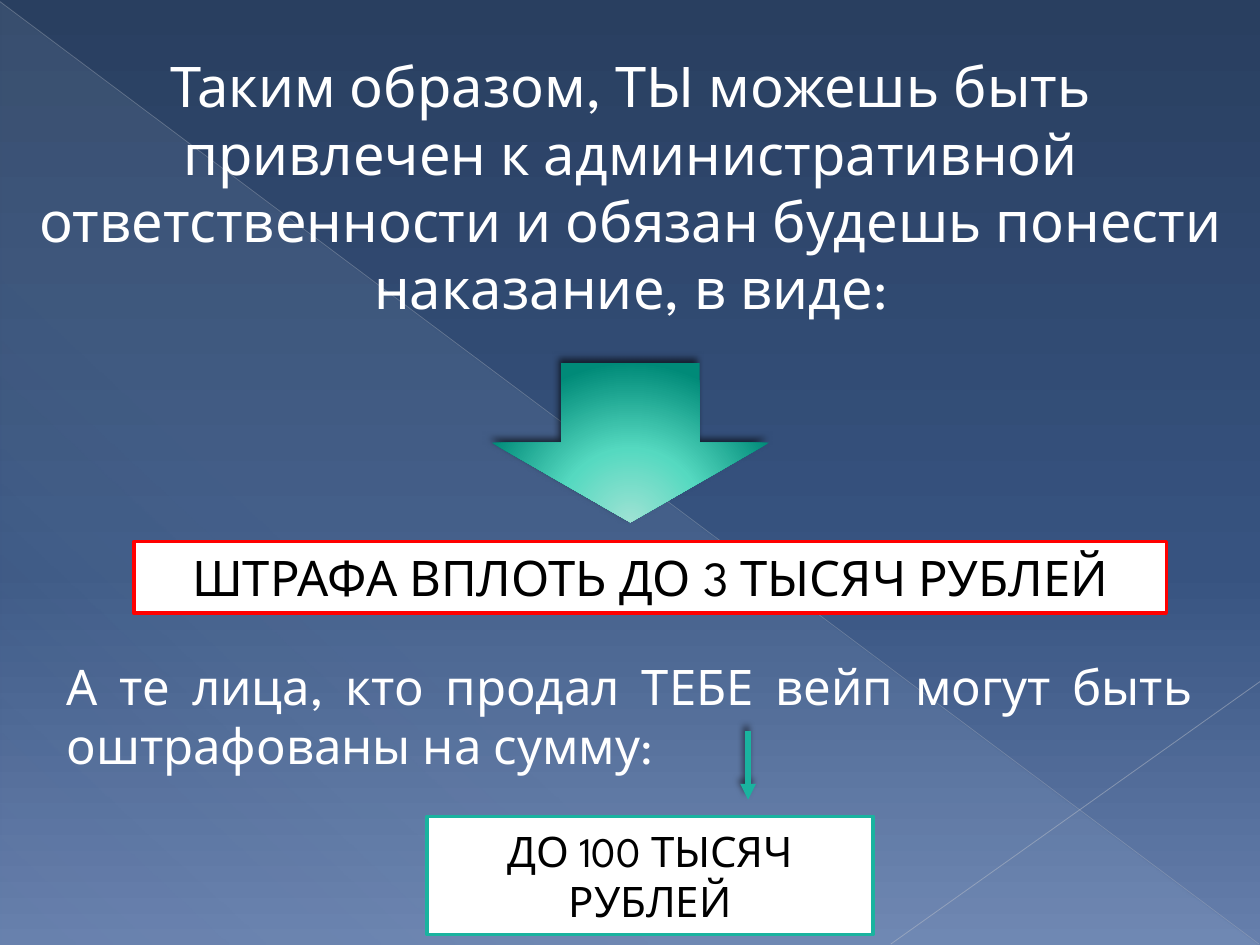
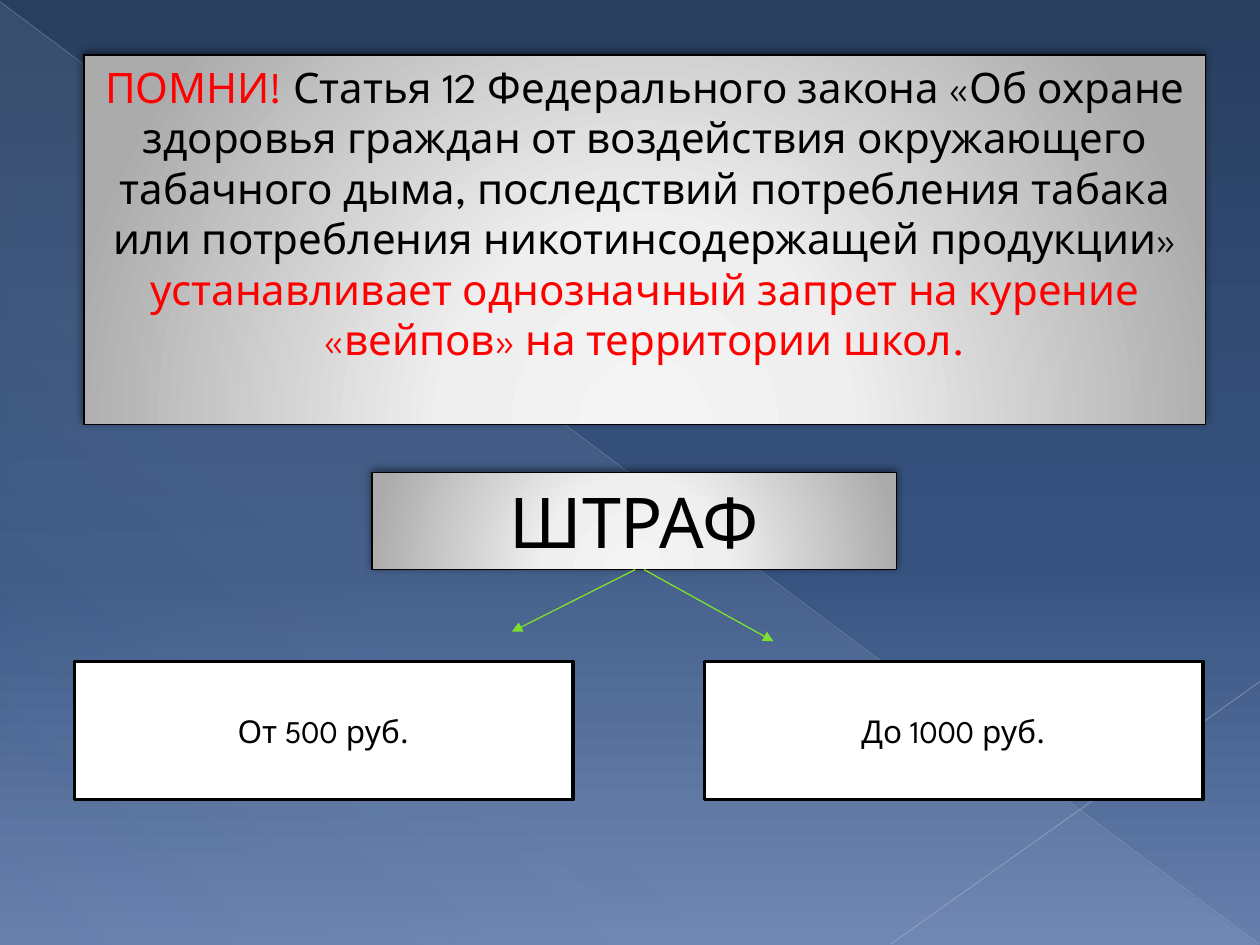
from dataclasses import dataclass
from typing import Optional

from lxml.etree import SubElement
from pptx import Presentation
from pptx.dml.color import RGBColor
from pptx.enum.shapes import MSO_CONNECTOR, MSO_SHAPE
from pptx.enum.text import MSO_ANCHOR, MSO_AUTO_SIZE, PP_ALIGN
from pptx.oxml.ns import qn
from pptx.util import Pt

FONT = "League Spartan"
WHITE, BLACK, RED, TEAL, GREEN = "FFFFFF", "000000", "FF0000", "1AB39F", "7EE02C"


# Shared style records
@dataclass(frozen=True)
class Gradient:
    stops: tuple  # (position %, colour, opacity %)
    angle: Optional[float] = None  # None means a circular gradient


@dataclass(frozen=True)
class Shadow:
    opacity: int
    blur: float
    distance: float
    angle: int = 245


@dataclass(frozen=True)
class Box:
    at: tuple  # left, top, width, height
    runs: tuple = ()  # (text, colour)
    size: float = 18
    fill: object = None  # hex string or Gradient
    line: Optional[str] = None
    weight: float = 2
    shadow: Optional[Shadow] = None
    kind: MSO_SHAPE = MSO_SHAPE.RECTANGLE
    align: PP_ALIGN = PP_ALIGN.CENTER
    anchor: MSO_ANCHOR = MSO_ANCHOR.TOP


@dataclass(frozen=True)
class Line:
    start: tuple
    end: tuple
    color: str
    weight: float
    opacity: int = 100
    arrow: bool = False
    shadow: Optional[Shadow] = None


BACKGROUND = Gradient(((0, "293F60", 100), (60, "375380", 100), (100, "667FAC", 100)), 90)
SHEEN = Gradient(((0, "D6ECFF", 10), (70, "D6ECFF", 8), (100, "D6ECFF", 1)), 133)
TEAL_GLOW = Gradient(((0, "9FE2D4", 100), (46, "55D9C0", 100), (100, "008A78", 100)))
SILVER = Gradient(((0, "F4F4F4", 100), (34, "EFEFEF", 100), (100, "ABABAB", 100)))
ARROW_SHADOW = Shadow(60, 4, 3)
PANEL_SHADOW = Shadow(50, 5, 2)


# Colours, gradients and shadows
def rgb(color: str) -> RGBColor:
    return RGBColor.from_string(color)


def add_color(parent, color: str, opacity: int) -> None:
    clr = SubElement(parent, qn("a:srgbClr"), val=color)
    if opacity < 100:
        SubElement(clr, qn("a:alpha"), val=str(opacity * 1000))


def set_gradient(fill, owner, gradient: Gradient) -> None:
    fill.gradient()
    grad = owner.find(".//" + qn("a:gradFill"))
    for child in list(grad):
        grad.remove(child)
    stops = SubElement(grad, qn("a:gsLst"))
    for position, color, opacity in gradient.stops:
        add_color(SubElement(stops, qn("a:gs"), pos=str(position * 1000)), color, opacity)
    if gradient.angle is None:
        circle = SubElement(grad, qn("a:path"), path="circle")
        SubElement(circle, qn("a:fillToRect"), l="50000", t="155000", r="50000", b="-55000")
    else:
        SubElement(grad, qn("a:lin"), ang=str(gradient.angle * 60000), scaled="0")


def set_shadow(sp_pr, shadow: Optional[Shadow]) -> None:
    effects = sp_pr.find(qn("a:effectLst"))
    if effects is None:
        effects = SubElement(sp_pr, qn("a:effectLst"))
    if shadow:
        outer = SubElement(effects, qn("a:outerShdw"), blurRad=str(Pt(shadow.blur)),
                           dist=str(Pt(shadow.distance)), dir=str(shadow.angle * 60000),
                           rotWithShape="0")
        add_color(outer, BLACK, shadow.opacity)


# Drawing
def style_box(sp, box: Box) -> None:
    sp.left, sp.top, sp.width, sp.height = (Pt(v) for v in box.at)
    if isinstance(box.fill, Gradient):
        set_gradient(sp.fill, sp._element.spPr, box.fill)
    elif box.fill:
        sp.fill.solid()
        sp.fill.fore_color.rgb = rgb(box.fill)
    else:
        sp.fill.background()
    if box.line:
        sp.line.color.rgb = rgb(box.line)
        sp.line.width = Pt(box.weight)
    else:
        sp.line.fill.background()
    sp.shadow.inherit = False
    set_shadow(sp._element.spPr, box.shadow)
    if box.runs:
        write_text(sp.text_frame, box)


def write_text(tf, box: Box) -> None:
    tf.word_wrap = True
    tf.auto_size = MSO_AUTO_SIZE.NONE
    tf.vertical_anchor = box.anchor
    p = tf.paragraphs[0]
    p.alignment = box.align
    for text, color in box.runs:
        r = p.add_run()
        r.text = text
        r.font.name = FONT
        r.font.size = Pt(box.size)
        r.font.color.rgb = rgb(color)


def add_box(s, box: Box):
    if box.fill:
        sp = s.shapes.add_shape(box.kind, *(Pt(v) for v in box.at))
    else:
        sp = s.shapes.add_textbox(*(Pt(v) for v in box.at))
    style_box(sp, box)
    return sp


def add_line(s, line: Line):
    cn = s.shapes.add_connector(MSO_CONNECTOR.STRAIGHT,
                                *(Pt(v) for v in line.start + line.end))
    cn.line.color.rgb = rgb(line.color)
    cn.line.width = Pt(line.weight)
    ln = cn.line._get_or_add_ln()
    if line.opacity < 100:
        SubElement(ln.find(".//" + qn("a:srgbClr")), qn("a:alpha"),
                   val=str(line.opacity * 1000))
    if line.arrow:
        SubElement(ln, qn("a:tailEnd"), type="triangle")
    set_shadow(cn._element.spPr, line.shadow)
    return cn


def add_slide(prs, title: Box):
    s = prs.slides.add_slide(prs.slide_layouts[5])
    style_box(s.shapes.title, title)
    return s


def decorate_master(prs, s) -> None:
    """Set the background and move the shared decoration to the master."""
    master = prs.slide_master
    set_gradient(master.background.fill, master._element, BACKGROUND)
    decoration = (
        add_box(s, Box((0.5, 1, 719, 539), fill=SHEEN, kind=MSO_SHAPE.RIGHT_TRIANGLE)),
        add_line(s, Line((0, 1), (719.5, 539.5), "B7BCC5", 0.39, opacity=35)),
        add_line(s, Line((720, 389.5), (509, 539.5), "BFC3CB", 0.47, opacity=45)),
    )
    for i, sp in enumerate(decoration):
        sp._element.find(".//" + qn("p:cNvPr")).set("id", str(20 + i))
        master.shapes._spTree.insert(2 + i, sp._element)


# Slide 1: liability of the buyer and the seller
def build_liability(prs) -> None:
    s = add_slide(prs, Box((14.5, 26, 692, 201), (
        ("Таким образом, ТЫ можешь быть привлечен к административной ответственности "
         "и обязан будешь понести наказание, в виде:", WHITE),), 32))
    decorate_master(prs, s)
    add_box(s, Box((281, 207.5, 158.5, 91), fill=TEAL_GLOW, shadow=ARROW_SHADOW,
                   kind=MSO_SHAPE.DOWN_ARROW))
    add_box(s, Box((76.5, 309.5, 590, 41), (("ШТРАФА ВПЛОТЬ ДО 3 ТЫСЯЧ РУБЛЕЙ", BLACK),),
                   28, WHITE, RED))
    add_box(s, Box((31, 371.5, 657.5, 75), (
        ("А те лица, кто продал ТЕБЕ вейп могут быть оштрафованы на сумму:", WHITE),),
        28, align=PP_ALIGN.JUSTIFY))
    add_box(s, Box((244, 466.5, 255, 67.5), (("ДО 100 ТЫСЯЧ РУБЛЕЙ", BLACK),),
                   24, WHITE, TEAL, anchor=MSO_ANCHOR.MIDDLE))
    add_line(s, Line((427.5, 417.5), (427.5, 457), TEAL, 3, arrow=True, shadow=ARROW_SHADOW))


# Slide 2: the ban in schools and the range of the fine
def build_school_ban(prs) -> None:
    panel = dict(fill=SILVER, line=BLACK, weight=0.75, shadow=PANEL_SHADOW)
    s = add_slide(prs, Box((48, 31.5, 641, 211), (
        ("ПОМНИ!", RED),
        (" Статья 12 Федерального закона «Об охране здоровья граждан от воздействия "
         "окружающего табачного дыма, последствий потребления табака или потребления "
         "никотинсодержащей продукции» ", BLACK),
        ("устанавливает однозначный запрет на курение «вейпов» на территории школ.", RED),
    ), 24, **panel))
    add_box(s, Box((212.5, 270, 300, 55.5), (("ШТРАФ", BLACK),), 40, **panel))
    for start, end in (((363, 325.5), (292.5, 361)), ((368, 325.5), (442, 366.5))):
        add_line(s, Line(start, end, GREEN, 0.75, arrow=True))
    for i, amount in enumerate(("От 500 руб.", "До 1000 руб.")):
        add_box(s, Box((42.5 + 360 * i, 378, 285, 79), ((amount, BLACK),),
                       18, WHITE, BLACK, anchor=MSO_ANCHOR.MIDDLE))


def main() -> None:
    prs = Presentation()
    prs.slide_width, prs.slide_height = Pt(720), Pt(540)
    build_liability(prs)
    build_school_ban(prs)
    prs.save("out.pptx")


if __name__ == "__main__":
    main()
